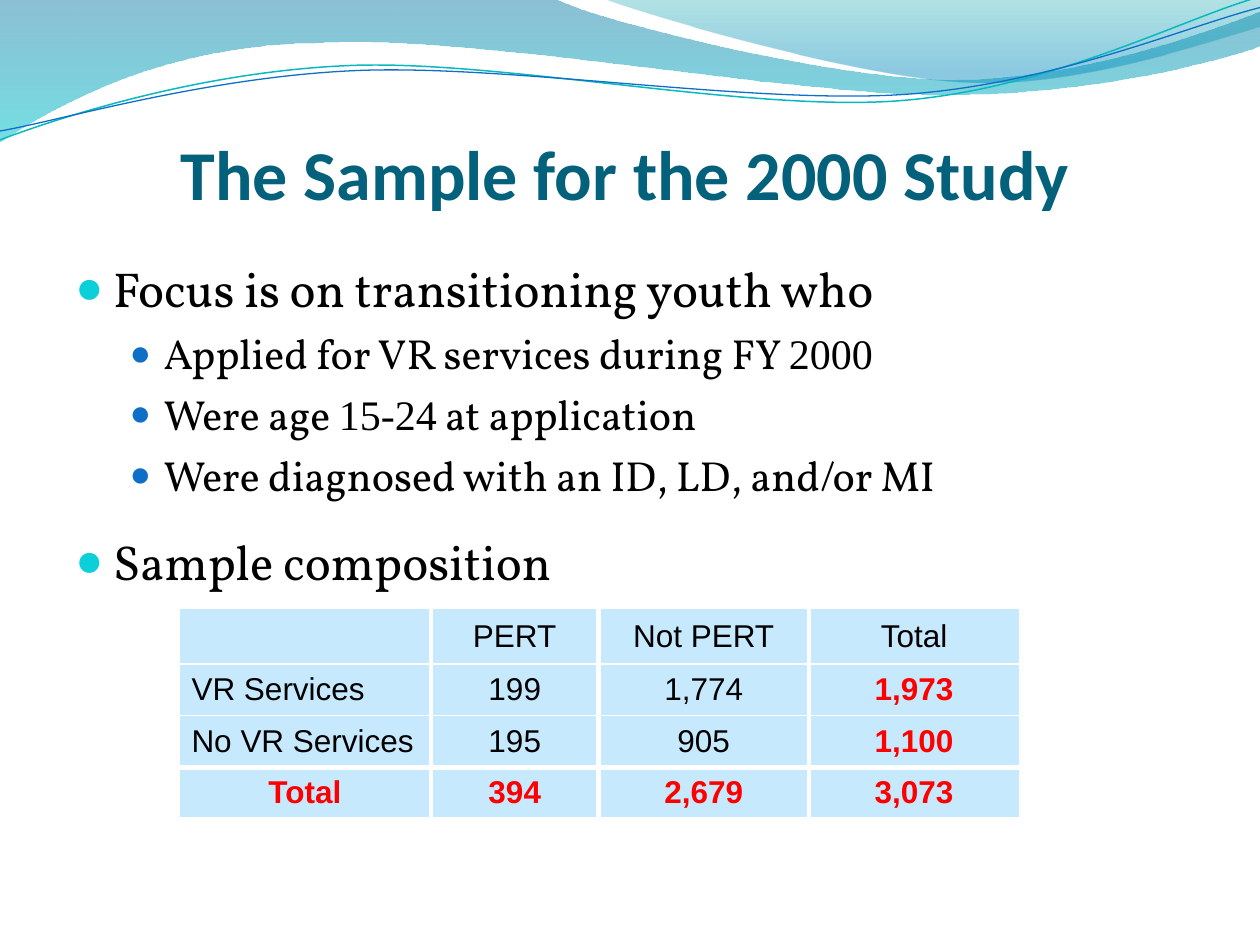
from math import cos, radians, sin
from lxml.etree import SubElement
from pptx import Presentation
from pptx.dml.color import RGBColor
from pptx.enum.text import MSO_ANCHOR, PP_ALIGN
from pptx.oxml.ns import qn
from pptx.util import Inches, Pt

BLACK = RGBColor(0, 0, 0)
WHITE = RGBColor(255, 255, 255)
RED = RGBColor(255, 0, 0)
NAVY = RGBColor(0x04, 0x61, 0x7B)
AQUA = RGBColor(0x0B, 0xD0, 0xD9)
BLUE = RGBColor(0x0F, 0x6F, 0xC6)
TEAL = RGBColor(0x0A, 0xB8, 0xBF)
PALE = RGBColor(0xC6, 0xE9, 0xFE)
DEEP = RGBColor(0x00, 0x74, 0xA1)
CYAN = RGBColor(0x00, 0xC6, 0xCF)
SEA = RGBColor(0x00, 0xA1, 0xA9)
SKY = RGBColor(0x00, 0x8B, 0xBF)

deck = Presentation()
deck.slide_width, deck.slide_height = Inches(10), Inches(7.5)
slide = deck.slides.add_slide(deck.slide_layouts[6])


def trace(start, steps, close):
    spots = [step[i:i + 2] for step in steps for i in range(0, len(step), 2)]
    pen = slide.shapes.build_freeform(Inches(start[0]), Inches(start[1]))
    pen.add_line_segments([(Inches(x), Inches(y)) for x, y in spots], close=close)
    shape = pen.convert_to_shape()
    shape.shadow.inherit = False
    lines = iter(list(shape.element.spPr.iter(qn("a:lnTo"))))
    for step in steps:
        first = next(lines)
        if len(step) == 6:
            curve = first.makeelement(qn("a:cubicBezTo"))
            first.addprevious(curve)
            for line in (first, next(lines), next(lines)):
                curve.append(line[0])
                line.getparent().remove(line)
    return shape


def write(para, text, look, color):
    run = para.add_run()
    run.text = text
    for key, value in look.items():
        setattr(run.font, key, value)
    run.font.color.rgb = color


bands = [
    ((0, -0.01),
     [(4.4, -0.01), (4.76, 0.17, 6.64, 0.63, 7.58, 0.63), (8.53, 0.63, 9.58, 0.26, 10, 0.09),
      (10.01, 0.36), (9.83, 0.44, 8.7, 0.76, 7.46, 0.75), (6.22, 0.75, 3.82, 0.28, 2.57, 0.34),
      (1.29, 0.35, 0.46, 0.83, -0.01, 1.13)],
     [(0, DEEP, 45), (1, CYAN, 55)]),
    ((4.79, -0.01),
     [(5.09, 0.11, 6.82, 0.62, 7.69, 0.65), (8.56, 0.69, 9.61, 0.32, 10, 0.21), (10, 0)],
     [(0, SEA, 30), (0.8, SKY, 45)]),
]
for start, steps, tones in bands:
    band = trace(start, steps, True)
    band.line.fill.background()
    band.fill.gradient()
    band.fill.gradient_angle = 270
    for stop, (place, color, alpha) in zip(band.fill.gradient_stops, tones):
        stop.position = place
        stop.color.rgb = color
    for mark, tone in zip(band.element.spPr.iter(qn("a:srgbClr")), tones):
        SubElement(mark, qn("a:alpha"), val=str(tone[2] * 1000))

TILT = 2.7
waves = [
    ([(0, 1.11), (0.48, 0.93, 1.58, 0.57, 2.77, 0.52), (3.95, 0.47, 5.93, 0.89, 7.13, 0.8),
      (8.33, 0.71, 9.38, 0.15, 9.98, -0.02)], (4.99, 0.575), TEAL, 0.85),
    ([(0, 1.04), (0.47, 0.96, 1.64, 0.61, 2.83, 0.56), (4.03, 0.51, 5.97, 0.83, 7.17, 0.75),
      (8.36, 0.67, 9.41, 0.21, 10, 0.06)], (4.995, 0.59), BLUE, 0.75),
]
up, over = sin(radians(TILT)), cos(radians(TILT))
for steps, (midx, midy), color, width in waves:
    level = []
    for step in steps:
        flat = []
        for x, y in zip(step[::2], step[1::2]):
            dx, dy = x - midx, y - midy
            flat += [midx + dx * over - dy * up, midy + dx * up + dy * over]
        level.append(flat)
    wave = trace(level[0], level[1:], False)
    wave.rotation = 360 - TILT
    wave.fill.background()
    wave.line.color.rgb = color
    wave.line.width = Pt(width)

title = slide.shapes.add_textbox(Inches(0.25), Inches(0.58), Inches(9.42), Inches(1.12)).text_frame
frame = dict(word_wrap=True, vertical_anchor=MSO_ANCHOR.BOTTOM, margin_left=0,
             margin_right=0, margin_bottom=0)
for key, value in frame.items():
    setattr(title, key, value)
title.paragraphs[0].alignment = PP_ALIGN.CENTER
write(title.paragraphs[0], "The Sample for the 2000 Study",
      dict(name="Calibri", size=Pt(40), bold=True), NAVY)

body = slide.shapes.add_textbox(Inches(0.5), Inches(2), Inches(8.83), Inches(4.83)).text_frame
body.word_wrap = True
levels = [
    dict(left=0.3, hang=-0.3, gap=18, size=28, color=AQUA, scale=95),
    dict(left=0.7, hang=-0.27, gap=6, size=24, color=BLUE, scale=85),
]
SERIF, TIMES = "Vollkorn", "Times New Roman"
points = [
    (0, [("Focus is on transitioning youth who", SERIF)]),
    (1, [("Applied for VR services during FY ", SERIF), ("2000", TIMES)]),
    (1, [("Were age ", SERIF), ("15-24", TIMES), (" at application", SERIF)]),
    (1, [("Were diagnosed with an ID, LD, and/or MI", SERIF)]),
    (0, [("Sample composition", SERIF)]),
]
for row, (depth, parts) in enumerate(points):
    para = body.paragraphs[0] if row == 0 else body.add_paragraph()
    look = levels[depth]
    para.level = depth
    if row:
        para.space_before = Pt(look["gap"])
    props = para._p.get_or_add_pPr()
    props.set("marL", str(Inches(look["left"])))
    props.set("indent", str(Inches(look["hang"])))
    SubElement(SubElement(props, qn("a:buClr")), qn("a:srgbClr"), val=str(look["color"]))
    SubElement(props, qn("a:buSzPct"), val=str(look["scale"] * 1000))
    SubElement(props, qn("a:buFont"), typeface="Arial")
    SubElement(props, qn("a:buChar"), char="●")
    for text, name in parts:
        write(para, text, dict(name=name, size=Pt(look["size"])), BLACK)

data = [
    ["", "PERT", "Not PERT", "Total"],
    ["VR Services", "199", "1,774", "1,973"],
    ["No VR Services", "195", "905", "1,100"],
    ["Total", "394", "2,679", "3,073"],
]
table = slide.shapes.add_table(4, 4, Inches(1.42), Inches(4.83), Inches(6.67), Inches(1.66)).table
table.first_row = table.horz_banding = False
for col, width in zip(table.columns, [2, 1.33, 1.67, 1.67]):
    col.width = Inches(width)
for line, height in zip(table.rows, [0.44, 0.41, 0.41, 0.4]):
    line.height = Inches(height)
for r, texts in enumerate(data):
    for c, text in enumerate(texts):
        cell = table.cell(r, c)
        cell.vertical_anchor = MSO_ANCHOR.MIDDLE
        edges = dict(lnL=3 if c else 1, lnR=3 if c < 3 else 1,
                     lnT=3 if r == 3 else 1, lnB=3 if r == 2 else 1)
        for tag, width in edges.items():
            edge = SubElement(cell._tc.get_or_add_tcPr(), qn("a:" + tag), w=str(Pt(width)))
            SubElement(SubElement(edge, qn("a:solidFill")), qn("a:srgbClr"), val=str(WHITE))
        cell.fill.solid()
        cell.fill.fore_color.rgb = PALE
        if text:
            para = cell.text_frame.paragraphs[0]
            para.alignment = PP_ALIGN.LEFT if c == 0 and r < 3 else PP_ALIGN.CENTER
            total = r == 3 or (c == 3 and r > 0)
            write(para, text, dict(name="Arial", size=Pt(18), bold=total), RED if total else BLACK)

deck.save("out.pptx")
